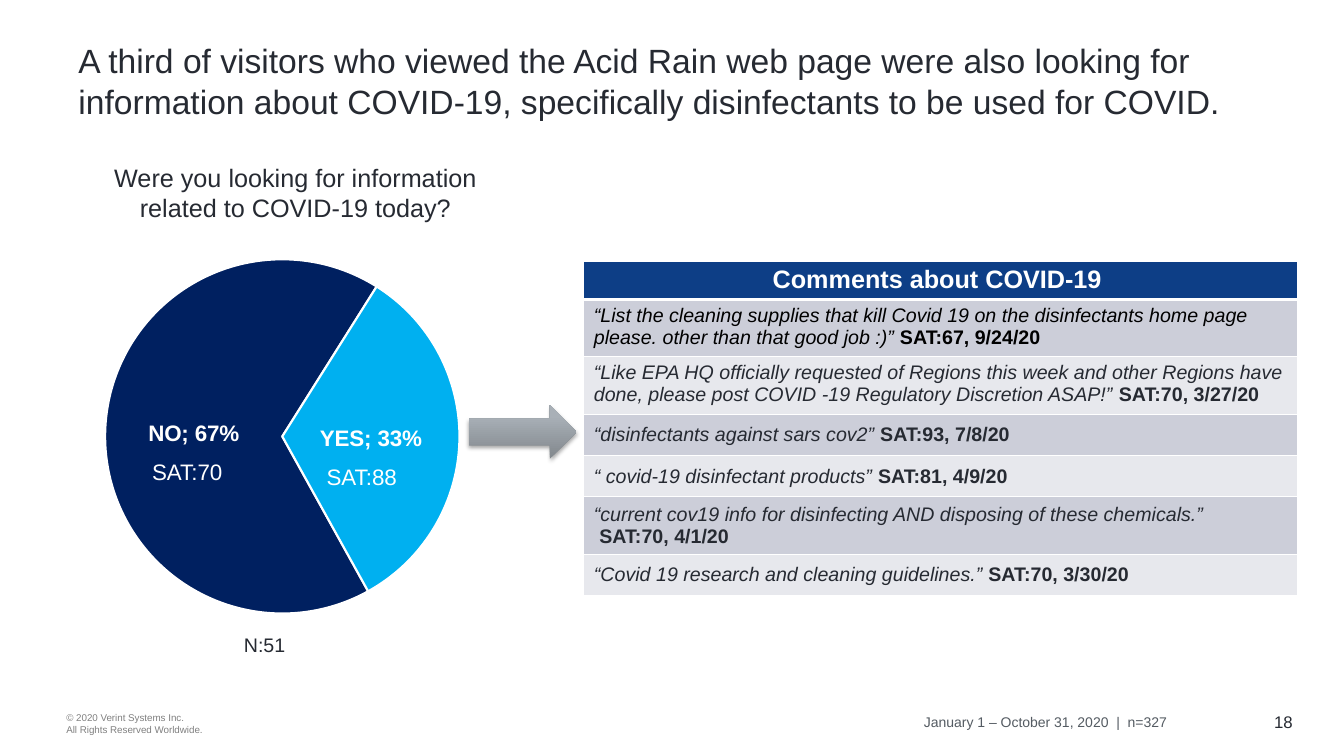
"""Build the COVID-19 interest slide with its pie chart and table of comments."""
from dataclasses import dataclass

from lxml import etree
from pptx import Presentation
from pptx.chart.data import CategoryChartData
from pptx.dml.color import RGBColor
from pptx.enum.chart import XL_CHART_TYPE, XL_LABEL_POSITION
from pptx.enum.shapes import MSO_SHAPE
from pptx.enum.text import MSO_ANCHOR, PP_ALIGN
from pptx.oxml import parse_xml
from pptx.oxml.ns import nsdecls, qn
from pptx.util import Inches, Pt

LEFT, CENTER, RIGHT = PP_ALIGN.LEFT, PP_ALIGN.CENTER, PP_ALIGN.RIGHT
TOP, MIDDLE = MSO_ANCHOR.TOP, MSO_ANCHOR.MIDDLE
PIE, LABEL_CENTER = XL_CHART_TYPE.PIE, XL_LABEL_POSITION.CENTER
RIGHT_ARROW = MSO_SHAPE.RIGHT_ARROW

FONT = "Arial"
INK = RGBColor(0x26, 0x2A, 0x32)
BLACK = RGBColor(0, 0, 0)
WHITE = RGBColor(0xFF, 0xFF, 0xFF)
GRAY = RGBColor(0x80, 0x80, 0x80)
SLATE = RGBColor(0x54, 0x5B, 0x62)
NAVY = RGBColor(0x00, 0x20, 0x60)
SKY = RGBColor(0x00, 0xB0, 0xF0)
HEADER_BLUE = RGBColor(0x0D, 0x3E, 0x86)
BANDS = (RGBColor(0xCC, 0xCE, 0xD9), RGBColor(0xE7, 0xE8, 0xED))
ARROW_DARK = RGBColor(0x82, 0x88, 0x8D)
ARROW_LIGHT = RGBColor(0xA9, 0xB0, 0xB7)


@dataclass
class Label:
    lines: tuple[str, ...]
    left: float
    top: float
    width: float
    height: float
    size: float
    color: RGBColor = INK
    align: PP_ALIGN = LEFT
    anchor: MSO_ANCHOR = TOP
    wrap: bool = True


@dataclass
class Comment:
    quote: str
    score: str
    height: float = 0.41
    color: RGBColor = INK
    anchor: MSO_ANCHOR = MIDDLE
    score_below: bool = False


LABELS = (
    Label(("© 2020 Verint Systems Inc.", "All Rights Reserved Worldwide."),
          0.56, 6.94, 2, 0.47, 7, GRAY, anchor=MIDDLE),
    Label(("18",), 11.81, 6.93, 1.11, 0.47, 12, align=RIGHT, anchor=MIDDLE),
    Label(("A third of visitors who viewed the Acid Rain web page were also looking for "
           "information about COVID-19, specifically disinfectants to be used for COVID.",),
          0.68, 0.35, 12.2, 0.9, 24, anchor=MIDDLE),
    Label(("Were you looking for information related to COVID-19 today?",),
          0.68, 1.56, 4.5, 0.71, 18, align=CENTER),
    Label(("January 1 – October 31, 2020  |  n=327",),
          8.87, 6.93, 2.8, 0.47, 10, SLATE, RIGHT, MIDDLE),
    Label(("SAT:70",), 1.41, 4.5, 0.91, 0.37, 16, WHITE, wrap=False),
    Label(("SAT:88",), 3.14, 4.55, 0.91, 0.37, 16, WHITE, wrap=False),
    Label(("N:51",), 2.32, 6.23, 0.62, 0.34, 14, wrap=False),
)

COMMENTS = (
    Comment("“List the cleaning supplies that kill Covid 19 on the disinfectants home page "
            "please. other than that good job :)” ", "SAT:67, 9/24/20", 0.57, BLACK, TOP),
    Comment("“Like EPA HQ officially requested of Regions this week and other Regions have "
            "done, please post COVID -19 Regulatory Discretion ASAP!” ",
            "SAT:70, 3/27/20", 0.57, anchor=TOP),
    Comment("“disinfectants against sars cov2” ", "SAT:93, 7/8/20"),
    Comment("“ covid-19 disinfectant products” ", "SAT:81, 4/9/20"),
    Comment("“current cov19 info for disinfecting AND disposing of these chemicals.”",
            "SAT:70, 4/1/20", 0.57, score_below=True),
    Comment("“Covid 19 research and cleaning guidelines.” ", "SAT:70, 3/30/20"),
)


def add_span(para, text: str, size: float, color: RGBColor,
             bold: bool = False, italic: bool = False) -> None:
    span = para.add_run()
    span.text = text
    span.font.name, span.font.size = FONT, Pt(size)
    span.font.bold, span.font.italic = bold, italic
    span.font.color.rgb = color


def add_label(page, label: Label) -> None:
    box = page.shapes.add_textbox(Inches(label.left), Inches(label.top),
                                  Inches(label.width), Inches(label.height))
    frame = box.text_frame
    frame.word_wrap = label.wrap
    frame.vertical_anchor = label.anchor
    for index, line in enumerate(label.lines):
        para = frame.add_paragraph() if index else frame.paragraphs[0]
        para.alignment = label.align
        add_span(para, line, label.size, label.color)


def add_pie(page) -> None:
    data = CategoryChartData(number_format="0%")
    data.categories = ("NO", "YES")
    data.add_series("Series 1", (0.67, 0.33))
    chart = page.shapes.add_chart(PIE, Inches(0.42), Inches(2.42),
                                  Inches(4.76), Inches(3.82), data).chart
    chart.has_legend = chart.has_title = False
    chart.font.name, chart.font.size, chart.font.color.rgb = FONT, Pt(10), INK
    plot = chart.plots[0]
    plot.vary_by_categories = True
    for index, color in enumerate((NAVY, SKY)):
        point = plot.series[0].points[index].format
        point.fill.solid()
        point.fill.fore_color.rgb = color
        point.line.color.rgb, point.line.width = WHITE, Pt(1.5)
    plot.has_data_labels = True
    labels = plot.data_labels
    labels.show_value = labels.show_category_name = True
    labels.show_percentage = False
    labels.number_format, labels.number_format_is_linked = "0%", False
    labels.position = LABEL_CENTER
    font = labels.font
    font.name, font.size, font.bold, font.color.rgb = FONT, Pt(16), True, WHITE
    label_xml = plot.data_labels._element
    separator = etree.Element(qn("c:separator"))
    separator.text = "; "
    label_xml.find(qn("c:showBubbleSize")).addnext(separator)
    pie_xml = label_xml.getparent()
    angle = pie_xml.find(qn("c:firstSliceAng"))
    if angle is None:
        angle = etree.SubElement(pie_xml, qn("c:firstSliceAng"))
    angle.set("val", "151")
    area = pie_xml.getparent()
    for old in area.findall(qn("c:layout")):
        area.remove(old)
    area.insert(0, parse_xml(
        f'<c:layout {nsdecls("c")}><c:manualLayout><c:layoutTarget val="inner"/>'
        '<c:xMode val="edge"/><c:yMode val="edge"/><c:x val="0.13"/><c:y val="0.04"/>'
        '<c:w val="0.74"/><c:h val="0.92"/></c:manualLayout></c:layout>'))


def style_cell(cell, fill: RGBColor, bottom: float = 1, top: float = 1) -> None:
    properties = cell._tc.get_or_add_tcPr()
    for side, width in (("L", 1), ("R", 1), ("T", top), ("B", bottom)):
        properties.append(parse_xml(
            f'<a:ln{side} {nsdecls("a")} w="{Pt(width)}"><a:solidFill>'
            f'<a:srgbClr val="{WHITE}"/></a:solidFill></a:ln{side}>'))
    cell.fill.solid()
    cell.fill.fore_color.rgb = fill


def add_comments(page) -> None:
    table = page.shapes.add_table(len(COMMENTS) + 1, 1, Inches(5.79), Inches(2.59),
                                  Inches(7.08), Inches(3.32)).table
    table.rows[0].height = Inches(0.38)
    header = table.cell(0, 0)
    style_cell(header, HEADER_BLUE, bottom=3)
    para = header.text_frame.paragraphs[0]
    para.alignment = CENTER
    add_span(para, "Comments about COVID-19 ", 18, WHITE, bold=True)
    for row, comment in enumerate(COMMENTS, start=1):
        table.rows[row].height = Inches(comment.height)
        cell = table.cell(row, 0)
        style_cell(cell, BANDS[(row - 1) % 2], top=3 if row == 1 else 1)
        cell.vertical_anchor = comment.anchor
        para = cell.text_frame.paragraphs[0]
        add_span(para, comment.quote, 14, comment.color, italic=True)
        if comment.score_below:
            para = cell.text_frame.add_paragraph()
            add_span(para, " ", 14, comment.color, italic=True)
        add_span(para, comment.score, 14, comment.color, bold=True)


def add_arrow(page) -> None:
    arrow = page.shapes.add_shape(RIGHT_ARROW, Inches(4.65), Inches(4.02),
                                  Inches(1.07), Inches(0.53))
    arrow.shadow.inherit = False
    arrow.line.fill.background()
    arrow.fill.gradient()
    arrow.fill.gradient_angle = 90
    stops = zip(arrow.fill.gradient_stops, (0, 0.8), (ARROW_DARK, ARROW_LIGHT))
    for stop, position, color in stops:
        stop.position, stop.color.rgb = position, color
    arrow._element.spPr.find(qn("a:effectLst")).append(parse_xml(
        f'<a:outerShdw {nsdecls("a")} blurRad="{Pt(3.1)}" dist="{Pt(1.8)}" dir="5400000" '
        'rotWithShape="0"><a:srgbClr val="000000"><a:alpha val="35000"/></a:srgbClr>'
        '</a:outerShdw>'))


def main() -> None:
    deck = Presentation()
    deck.slide_width, deck.slide_height = Inches(13.33), Inches(7.5)
    page = deck.slides.add_slide(deck.slide_layouts[6])
    add_pie(page)
    add_comments(page)
    add_arrow(page)
    for label in LABELS:
        add_label(page, label)
    deck.save("out.pptx")


if __name__ == "__main__":
    main()
